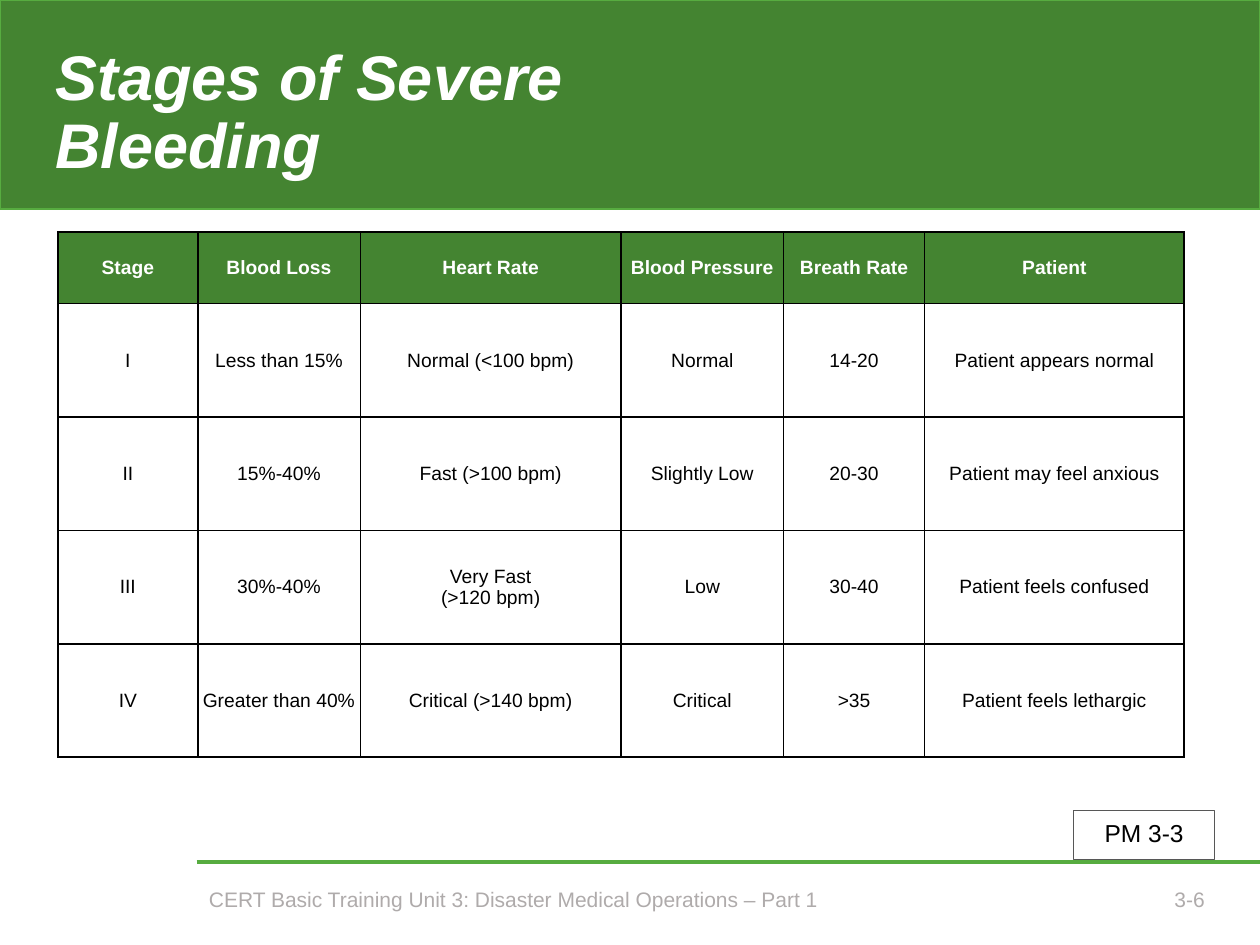
from lxml import etree
from pptx import Presentation
from pptx.dml.color import RGBColor
from pptx.enum.shapes import MSO_CONNECTOR, MSO_SHAPE
from pptx.enum.text import MSO_ANCHOR, PP_ALIGN
from pptx.oxml import parse_xml
from pptx.oxml.ns import nsdecls, qn
from pptx.util import Inches, Pt

GREEN, LIME, GREY, WHITE, BLACK = "448431", "57AC40", "AFABAB", "FFFFFF", "000000"


def rgb(color):
    return RGBColor.from_string(color)


def write(tf, text, size, color, align=PP_ALIGN.LEFT, bold=False, italic=False, spacing=0.9):
    """Fill a text frame, one paragraph per line of text."""
    tf.word_wrap = True
    tf.vertical_anchor = MSO_ANCHOR.MIDDLE
    for i, line in enumerate(text.split("\n")):
        p = tf.paragraphs[0] if i == 0 else tf.add_paragraph()
        p.alignment = align
        p.line_spacing = spacing
        r = p.add_run()
        r.text = line
        r.font.name = "Arial"
        r.font.size = Pt(size)
        r.font.bold = bold
        r.font.italic = italic
        r.font.color.rgb = rgb(color)


prs = Presentation()
prs.slide_width, prs.slide_height = Inches(10), Inches(7.5)
s = prs.slides.add_slide(prs.slide_layouts[6])

# Title band
band = s.shapes.add_shape(MSO_SHAPE.RECTANGLE, 0, 0, Inches(10), Inches(1.66))
band.shadow.inherit = False
band.fill.solid()
band.fill.fore_color.rgb = rgb(GREEN)
band.line.color.rgb = rgb(LIME)
band.line.width = Pt(1)

# Footer rule
rule = s.shapes.add_connector(MSO_CONNECTOR.STRAIGHT, Inches(1.56), Inches(6.84),
                              Inches(10), Inches(6.84))
rule.line.color.rgb = rgb(LIME)
rule.line.width = Pt(2.04)
etree.SubElement(rule._element.spPr, qn("a:effectLst"))

# Title and footer texts
texts = [
    (0.34, 0.35, 6.35, 1.11, "Stages of Severe Bleeding",
     dict(size=36, color=WHITE, bold=True, italic=True)),
    (1.56, 6.98, 5.04, 0.33, "CERT Basic Training Unit 3: Disaster Medical Operations – Part 1",
     dict(size=12, color=GREY)),
    (7.69, 6.98, 1.97, 0.33, "3-6", dict(size=12, color=GREY, align=PP_ALIGN.RIGHT)),
]
for x, y, w, h, text, style in texts:
    box = s.shapes.add_textbox(Inches(x), Inches(y), Inches(w), Inches(h))
    write(box.text_frame, text, **style)

# Table of stages
rows = [
    ["Stage", "Blood Loss", "Heart Rate", "Blood Pressure", "Breath Rate", "Patient"],
    ["I", "Less than 15%", "Normal (<100 bpm)", "Normal", "14-20", "Patient appears normal"],
    ["II", "15%-40%", "Fast (>100 bpm)", "Slightly Low", "20-30", "Patient may feel anxious"],
    ["III", "30%-40%", "Very Fast\n(>120 bpm)", "Low", "30-40", "Patient feels confused"],
    ["IV", "Greater than 40%", "Critical (>140 bpm)", "Critical", ">35",
     "Patient feels lethargic"],
]
widths = [1.11, 1.29, 2.07, 1.29, 1.12, 2.06]
heights = [0.57] + [0.9] * 4
table = s.shapes.add_table(len(rows), len(widths), Inches(0.46), Inches(1.84),
                           Inches(sum(widths)), Inches(sum(heights))).table
for column, width in zip(table.columns, widths):
    column.width = Inches(width)
for row, height in zip(table.rows, heights):
    row.height = Inches(height)

for i, row in enumerate(rows):
    header = i == 0
    for j, text in enumerate(row):
        cell = table.cell(i, j)
        cell.margin_left = cell.margin_right = Inches(0.04)
        cell.margin_top = cell.margin_bottom = 0
        cell.vertical_anchor = MSO_ANCHOR.MIDDLE
        write(cell.text_frame, text, 11, WHITE if header else BLACK,
              align=PP_ALIGN.CENTER, bold=header, spacing=1.0)
        tcPr = cell._tc.get_or_add_tcPr()
        for side in ("lnL", "lnR", "lnT", "lnB"):
            tcPr.append(parse_xml(
                f'<a:{side} {nsdecls("a")} w="{Pt(1)}"><a:solidFill>'
                f'<a:srgbClr val="{BLACK}"/></a:solidFill></a:{side}>'))
        cell.fill.solid()
        cell.fill.fore_color.rgb = rgb(GREEN if header else WHITE)

# Manual page reference
page_ref = s.shapes.add_shape(MSO_SHAPE.RECTANGLE, Inches(8.52), Inches(6.43),
                              Inches(1.12), Inches(0.39))
page_ref.shadow.inherit = False
page_ref.fill.background()
page_ref.line.color.rgb = rgb("575757")
page_ref.line.width = Pt(0.75)
write(page_ref.text_frame, "PM 3-3", 14, BLACK, align=PP_ALIGN.CENTER)

prs.save("out.pptx")
